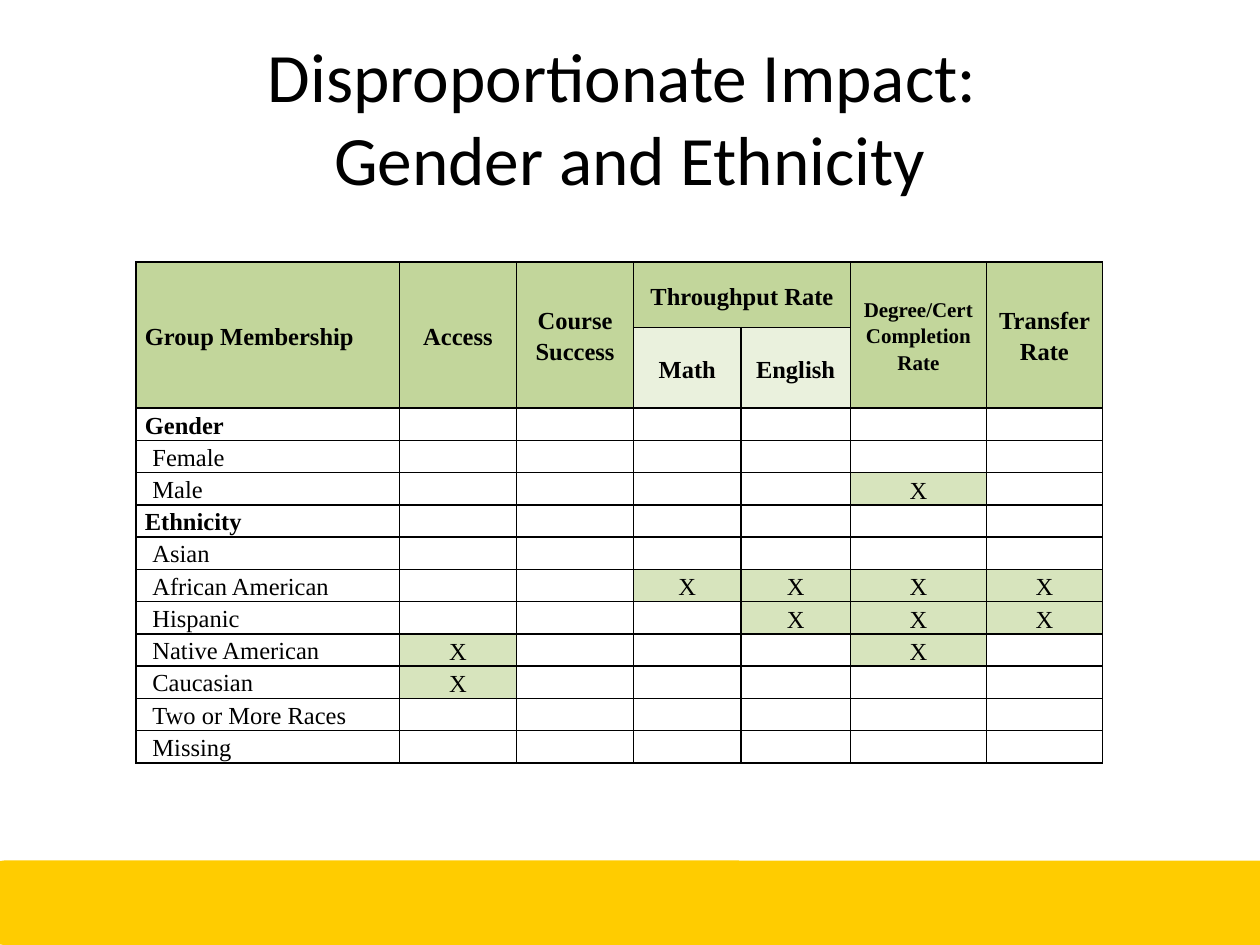
from lxml import etree
from pptx import Presentation
from pptx.dml.color import RGBColor
from pptx.enum.shapes import MSO_SHAPE
from pptx.enum.text import MSO_ANCHOR, PP_ALIGN
from pptx.oxml.ns import qn
from pptx.util import Inches, Pt

ROUNDED = MSO_SHAPE.ROUNDED_RECTANGLE
TOP, MIDDLE = MSO_ANCHOR.TOP, MSO_ANCHOR.MIDDLE
LEFT, CENTER = PP_ALIGN.LEFT, PP_ALIGN.CENTER

COLORS = {
    "text": "000000",
    "band": "FFCC00",
    "header": "C2D69B",
    "subheader": "EAF1DD",
    "mark": "D7E4BD",
}
COLUMN_WIDTHS = [2.09, 0.93, 0.93, 0.85, 0.87, 1.08, 0.92]
HEADER_HEIGHTS = [0.52, 0.64]
GROUP_HEIGHT = 0.256
SUBGROUP_INDENT = 0.06

# Text, row, column, last row, last column, size, alignment
HEADERS = [
    ("Group Membership", 0, 0, 1, 0, 14, LEFT),
    ("Access", 0, 1, 1, 1, 14, CENTER),
    ("Course Success", 0, 2, 1, 2, 14, CENTER),
    ("Throughput Rate", 0, 3, 0, 4, 14, CENTER),
    ("Degree/Cert Completion Rate", 0, 5, 1, 5, 12, CENTER),
    ("Transfer Rate", 0, 6, 1, 6, 14, CENTER),
]
SUBHEADERS = {3: "Math", 4: "English"}

# Each group with the columns in which impact is marked
GROUPS = {
    "Gender": [],
    "Female": [],
    "Male": [5],
    "Ethnicity": [],
    "Asian": [],
    "African American": [3, 4, 5, 6],
    "Hispanic": [4, 5, 6],
    "Native American": [1, 5],
    "Caucasian": [1],
    "Two or More Races": [],
    "Missing": [],
}
CATEGORIES = ("Gender", "Ethnicity")


def color(name):
    return RGBColor.from_string(COLORS[name])


def apply(target, values):
    for name, value in values.items():
        setattr(target, name, value)


class SlideBuilder:
    title_font = {"name": "Calibri", "size": Pt(39.6), "bold": False}
    table_font = "Times New Roman"
    cell_margins = {
        "margin_left": Inches(0.07),
        "margin_right": Inches(0.07),
        "margin_top": 0,
        "margin_bottom": 0,
    }

    def __init__(self, slide):
        self.slide = slide

    def band(self, left, top, width, height):
        """Draw the footer band behind everything else."""
        band = self.slide.shapes.add_shape(
            ROUNDED, Inches(left), Inches(top), Inches(width), Inches(height))
        band.shadow.inherit = False
        band.fill.solid()
        band.fill.fore_color.rgb = color("band")
        band.line.fill.background()
        self.slide.shapes._spTree.insert(2, band._element)

    def title(self, text, left, top, width, height):
        title = self.slide.shapes.title
        apply(title, {"left": Inches(left), "top": Inches(top),
                      "width": Inches(width), "height": Inches(height)})
        frame = title.text_frame
        frame.text = text
        apply(frame, {"word_wrap": True, "vertical_anchor": MIDDLE})
        paragraph = frame.paragraphs[0]
        paragraph.alignment = CENTER
        for run in paragraph.runs:
            apply(run.font, self.title_font)
            run.font.color.rgb = color("text")

    def table(self, left, top, widths, heights):
        table = self.slide.shapes.add_table(
            len(heights), len(widths), Inches(left), Inches(top),
            Inches(sum(widths)), Inches(sum(heights))).table
        apply(table, {"first_row": False, "horz_banding": False})
        for column, width in zip(table.columns, widths):
            column.width = Inches(width)
        for row, height in zip(table.rows, heights):
            row.height = Inches(height)
        for cell in table.iter_cells():
            apply(cell, self.cell_margins)
            self.borders(cell)
            cell.fill.background()
            # Keeps blank cells from stretching their row
            paragraph = cell.text_frame.paragraphs[0]._p
            etree.SubElement(paragraph, qn("a:endParaRPr"), sz="1000")
        return table

    def borders(self, cell):
        properties = cell._tc.get_or_add_tcPr()
        for side in ("a:lnL", "a:lnR", "a:lnT", "a:lnB"):
            line = etree.SubElement(properties, qn(side), w=str(Pt(1)))
            fill = etree.SubElement(line, qn("a:solidFill"))
            etree.SubElement(fill, qn("a:srgbClr"), val=COLORS["text"])

    def cell(self, cell, text, fill=None, size=14, bold=False,
             align=CENTER, anchor=MIDDLE, indent=0):
        cell.vertical_anchor = anchor
        if fill:
            cell.fill.solid()
            cell.fill.fore_color.rgb = color(fill)
        paragraph = cell.text_frame.paragraphs[0]
        apply(paragraph, {"alignment": align, "line_spacing": 1.15})
        if indent:
            paragraph._p.get_or_add_pPr().set("marL", str(Inches(indent)))
        run = paragraph.add_run()
        run.text = text
        apply(run.font, {"name": self.table_font, "size": Pt(size), "bold": bold})
        run.font.color.rgb = color("text")


def main():
    deck = Presentation()
    deck.slide_width, deck.slide_height = Inches(10), Inches(7.5)
    builder = SlideBuilder(deck.slides.add_slide(deck.slide_layouts[5]))

    builder.band(-0.08, 6.83, 10.25, 0.67)
    builder.title("Disproportionate Impact: \vGender and Ethnicity", 0.5, 0.3, 9, 1.25)

    heights = HEADER_HEIGHTS + [GROUP_HEIGHT] * len(GROUPS)
    impact = builder.table(1.08, 2.08, COLUMN_WIDTHS, heights)

    for text, row, column, last_row, last_column, size, align in HEADERS:
        header = impact.cell(row, column)
        if (row, column) != (last_row, last_column):
            header.merge(impact.cell(last_row, last_column))
        builder.cell(header, text, "header", size, True, align)
    for column, text in SUBHEADERS.items():
        builder.cell(impact.cell(1, column), text, "subheader", bold=True)

    for row, (group, marks) in enumerate(GROUPS.items(), len(HEADER_HEIGHTS)):
        is_category = group in CATEGORIES
        builder.cell(impact.cell(row, 0), group, bold=is_category, align=LEFT,
                     anchor=TOP, indent=0 if is_category else SUBGROUP_INDENT)
        for column in marks:
            builder.cell(impact.cell(row, column), "X", "mark")

    deck.save("out.pptx")


if __name__ == "__main__":
    main()
